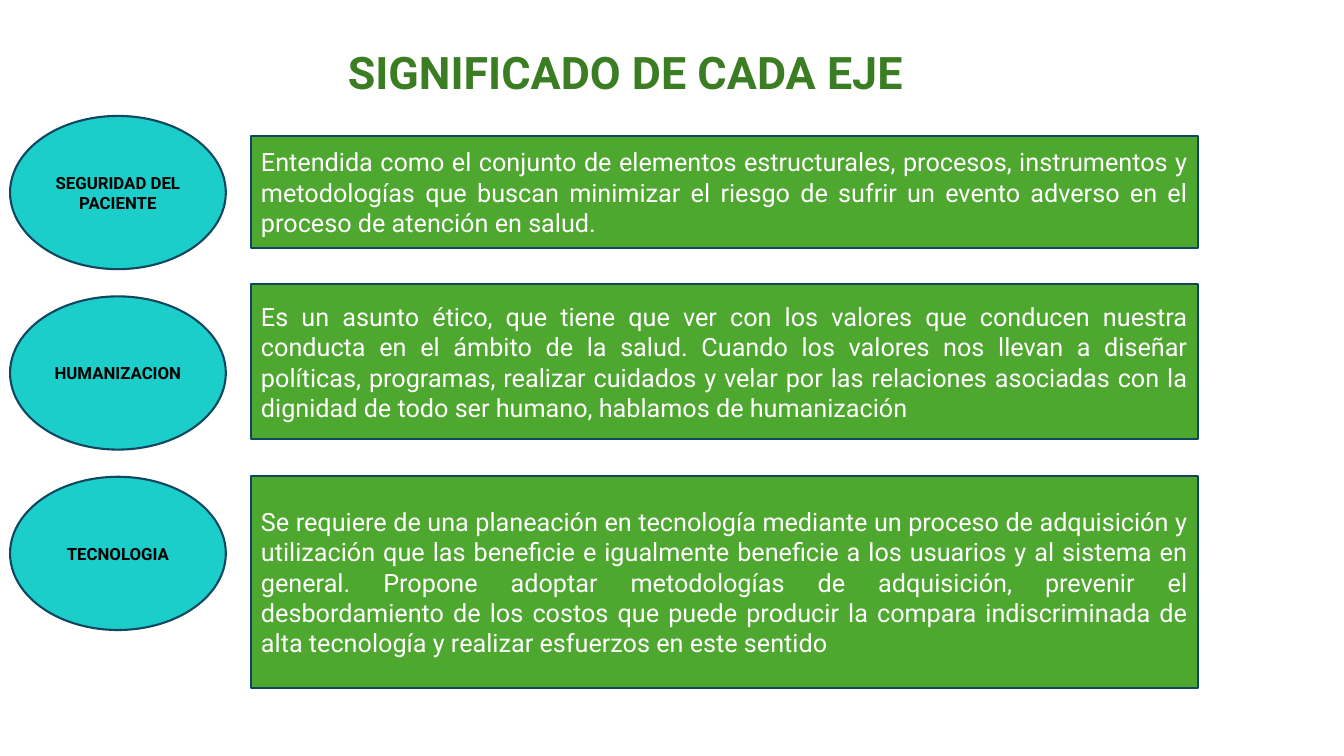
from pptx import Presentation
from pptx import util as u
from pptx.dml.color import RGBColor
from pptx.enum import shapes, text

FONT = "Roboto"
COLORS = {
    "title": "3B7D23",
    "oval": "1CCECA",
    "panel": "4EA72E",
    "outline": "104760",
    "label": "000000",
    "description": "FFFFFF",
}
# Axis name, description, height of the description panel
AXES = [
    ("SEGURIDAD DEL PACIENTE",
     "Entendida como el conjunto de elementos estructurales, procesos, instrumentos y "
     "metodologías que buscan minimizar el riesgo de sufrir un evento adverso en el "
     "proceso de atención en salud.", 1.11),
    ("HUMANIZACION",
     "Es un asunto ético, que tiene que ver con los valores que conducen nuestra "
     "conducta en el ámbito de la salud. Cuando los valores nos llevan a diseñar "
     "políticas, programas, realizar cuidados y velar por las relaciones asociadas con "
     "la dignidad de todo ser humano, hablamos de humanización", 1.54),
    ("TECNOLOGIA",
     "Se requiere de una planeación en tecnología mediante un proceso de adquisición y "
     "utilización que las beneficie e igualmente beneficie a los usuarios y al sistema en "
     "general. Propone adoptar metodologías de adquisición, prevenir el "
     "desbordamiento de los costos que puede producir la compara indiscriminada de "
     "alta tecnología y realizar esfuerzos en este sentido", 2.11),
]
OVAL_HEIGHT, OVAL_GAP = 1.52, 0.27
PANEL_GAP = 0.36


def color(name):
    return RGBColor.from_string(COLORS[name])


def write(shape, content, size, color_name, alignment, bold=False):
    frame = shape.text_frame
    frame.word_wrap = True
    frame.vertical_anchor = text.MSO_ANCHOR.MIDDLE
    paragraph = frame.paragraphs[0]
    paragraph.text = content
    paragraph.alignment = alignment
    font = paragraph.font
    font.name, font.size, font.bold = FONT, u.Pt(size), bold
    font.color.rgb = color(color_name)
    return paragraph


def add_outlined_shape(slide, kind, box, fill_name):
    shape = slide.shapes.add_shape(kind, *map(u.Inches, box))
    shape.shadow.inherit = False
    shape.fill.solid()
    shape.fill.fore_color.rgb = color(fill_name)
    shape.line.color.rgb = color("outline")
    shape.line.width = u.Pt(1.5)
    return shape


def add_title(slide, left, top, width, height):
    title = slide.shapes.title
    title.left, title.top = u.Inches(left), u.Inches(top)
    title.width, title.height = u.Inches(width), u.Inches(height)
    paragraph = write(title, "SIGNIFICADO DE CADA EJE", 32, "title",
                      text.PP_ALIGN.LEFT, bold=True)
    paragraph.line_spacing = 0.9


def add_axis_ovals(slide, left, top, width):
    for name, _, _ in AXES:
        oval = add_outlined_shape(slide, shapes.MSO_SHAPE.OVAL,
                                  (left, top, width, OVAL_HEIGHT), "oval")
        write(oval, name, 12, "label", text.PP_ALIGN.CENTER, bold=True)
        top += OVAL_HEIGHT + OVAL_GAP


def add_description_panels(slide, left, top, width):
    for _, description, height in AXES:
        panel = add_outlined_shape(slide, shapes.MSO_SHAPE.RECTANGLE,
                                   (left, top, width, height), "panel")
        write(panel, description, 18, "description", text.PP_ALIGN.JUSTIFY)
        top += height + PANEL_GAP


def main():
    presentation = Presentation()
    presentation.slide_width = u.Inches(13.33)
    presentation.slide_height = u.Inches(7.5)
    slide = presentation.slides.add_slide(presentation.slide_layouts.get_by_name("Title Only"))
    add_title(slide, 3.35, 0.34, 10.43, 0.81)
    add_axis_ovals(slide, 0.1, 1.15, 2.14)
    add_description_panels(slide, 2.49, 1.35, 9.39)
    presentation.save("out.pptx")


if __name__ == "__main__":
    main()
